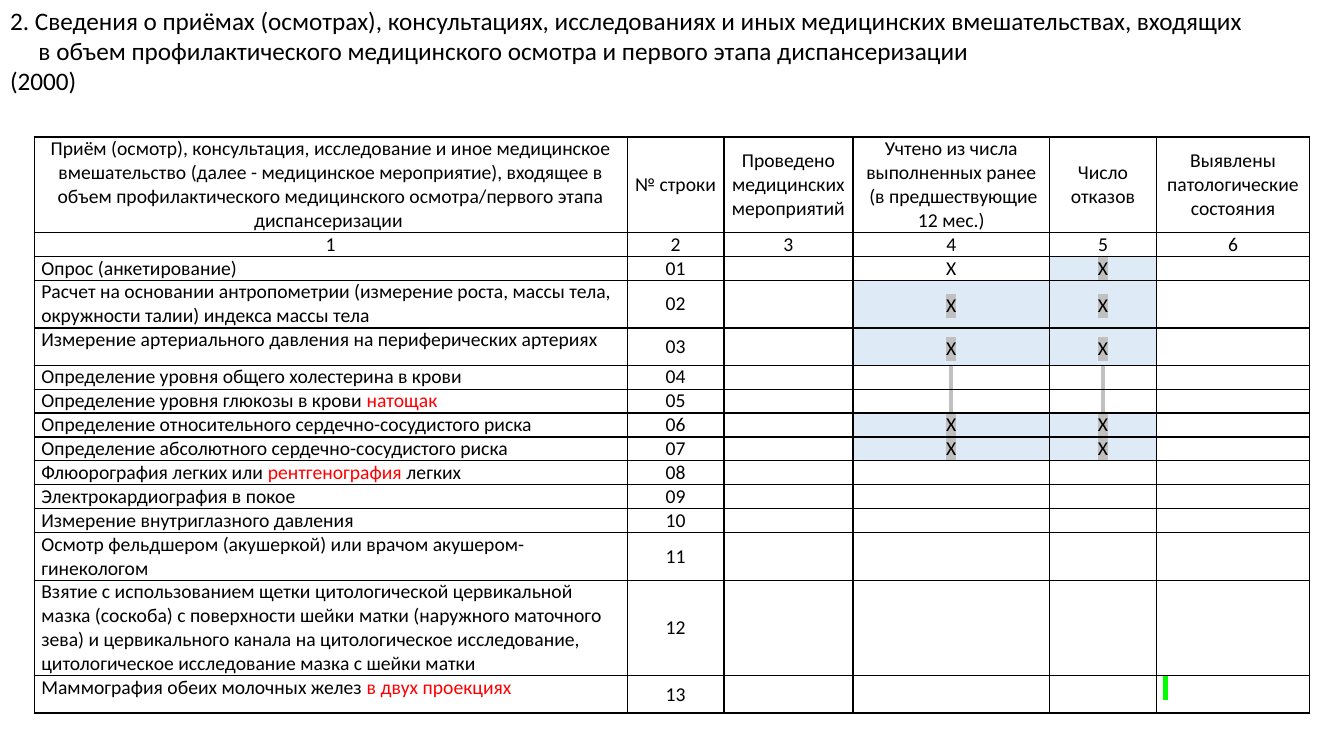
"""Build the slide with form table 2000 on preventive check-ups."""
from lxml import etree
from pptx import Presentation
from pptx.dml.color import RGBColor
from pptx.enum.text import MSO_ANCHOR, MSO_AUTO_SIZE, PP_ALIGN
from pptx.oxml.ns import qn
from pptx.util import Inches, Pt

LEFT, CENTER = PP_ALIGN.LEFT, PP_ALIGN.CENTER
TOP, MIDDLE = MSO_ANCHOR.TOP, MSO_ANCHOR.MIDDLE
NO_AUTOFIT = MSO_AUTO_SIZE.NONE
BLACK, RED, WHITE = "000000", "FF0000", "FFFFFF"
PALE_BLUE, GREY, GREEN = "DEEBF7", "C0C0C0", "00FF00"
LINE = 0.235


def rgb(value):
    return RGBColor.from_string(value)


def add_text(paragraph, text, size, color=BLACK, highlight=None):
    run = paragraph.add_run()
    run.text = text
    run.font.size = Pt(size)
    run.font.name = "Calibri"
    run.font.color.rgb = rgb(color)
    if highlight:
        marker = etree.Element(qn("a:highlight"))
        etree.SubElement(marker, qn("a:srgbClr"), val=highlight)
        run._r.rPr.find(qn("a:solidFill")).addnext(marker)


heading = [
    "2. Сведения о приёмах (осмотрах), консультациях, исследованиях и иных медицинских вмешательствах, входящих",
    "     в объем профилактического медицинского осмотра и первого этапа диспансеризации",
    "(2000)",
]
column_titles = [
    "Приём (осмотр), консультация, исследование и иное медицинское вмешательство "
    "(далее - медицинское мероприятие), входящее в объем профилактического "
    "медицинского осмотра/первого этапа диспансеризации ",
    "№ строки",
    "Проведено медицинских \nмероприятий",
    "Учтено из числа выполненных ранее\v (в предшествующие 12 мес.)",
    "Число отказов",
    "Выявлены патологические состояния",
]
column_widths = [5.88, 0.96, 1.28, 1.95, 1.06, 1.52]
procedures = [
    ("Опрос (анкетирование)", LINE),
    ("Расчет на основании антропометрии (измерение роста, массы тела, окружности талии) индекса массы тела", 2 * LINE),
    ("Измерение артериального давления на периферических артериях", 0.37),
    ("Определение уровня общего холестерина в крови", LINE),
    ("Определение уровня глюкозы в крови |натощак", LINE),
    ("Определение относительного сердечно-сосудистого риска", LINE),
    ("Определение абсолютного сердечно-сосудистого риска", LINE),
    ("Флюорография легких или |рентгенография| легких", LINE),
    ("Электрокардиография в покое", LINE),
    ("Измерение внутриглазного давления", LINE),
    ("Осмотр фельдшером (акушеркой) или врачом акушером-гинекологом", 2 * LINE),
    ("Взятие с использованием щетки цитологической цервикальной мазка (соскоба) с поверхности шейки матки "
     "(наружного маточного зева) и цервикального канала на цитологическое исследование, "
     "цитологическое исследование мазка с шейки матки", 4 * LINE),
    ("Маммография обеих молочных желез |в двух проекциях", 0.37),
]
row_heights = [4 * LINE, LINE] + [height for _, height in procedures]
crossed = {(2, 4)} | {(row, column) for row in (3, 4, 7, 8) for column in (3, 4)}
grey_gaps = {(row, column) for row in (5, 6) for column in (3, 4)}

grid = [column_titles, [str(number) for number in range(1, 7)]]
for number, (procedure, _) in enumerate(procedures, 1):
    grid.append([procedure, f"{number:02d}", "", "", "", ""])
grid[2][3] = "Х"
grid[14][5] = " "
for row, column in crossed:
    grid[row][column] = "Х"
for row, column in grey_gaps:
    grid[row][column] = " "
highlights = {place: GREY for place in crossed | grey_gaps} | {(14, 5): GREEN}

prs = Presentation()
prs.slide_width, prs.slide_height = Inches(13.33), Inches(7.5)
slide = prs.slides.add_slide(prs.slide_layouts[5])

title = slide.shapes.title
title_place = {"left": 0, "top": 0, "width": Inches(13.33), "height": Inches(1.01)}
for name, value in title_place.items():
    setattr(title, name, value)
title_format = {"word_wrap": True, "auto_size": NO_AUTOFIT, "vertical_anchor": TOP}
for name, value in title_format.items():
    setattr(title.text_frame, name, value)
title.text_frame.text = "\n".join([""] * len(heading))
for paragraph, line in zip(title.text_frame.paragraphs, heading):
    paragraph.alignment = LEFT
    add_text(paragraph, line, 18)

table = slide.shapes.add_table(
    len(grid), len(column_widths), Inches(0.34), Inches(1.36),
    Inches(sum(column_widths)), Inches(sum(row_heights))).table
table.first_row = table.horz_banding = False
for column, width in zip(table.columns, column_widths):
    column.width = Inches(width)
for row, height in zip(table.rows, row_heights):
    row.height = Inches(height)

for r, values in enumerate(grid):
    for c, value in enumerate(values):
        cell = table.cell(r, c)
        top_aligned = r == 1 or (r > 1 and c == 0) or value == " "
        cell_format = {
            "margin_left": Inches(0.07), "margin_right": Inches(0.07),
            "margin_top": 0, "margin_bottom": 0,
            "vertical_anchor": TOP if top_aligned else MIDDLE,
        }
        for name, setting in cell_format.items():
            setattr(cell, name, setting)
        cell.fill.solid()
        cell.fill.fore_color.rgb = rgb(PALE_BLUE if (r, c) in crossed else WHITE)
        for position, side in enumerate(("a:lnL", "a:lnR", "a:lnT", "a:lnB")):
            border = etree.Element(qn(side), w=str(Pt(1)))
            paint = etree.SubElement(border, qn("a:solidFill"))
            etree.SubElement(paint, qn("a:srgbClr"), val=BLACK)
            cell._tc.tcPr.insert(position, border)

        lines = value.split("\n")
        cell.text = "\n" * (len(lines) - 1)
        for paragraph, line in zip(cell.text_frame.paragraphs, lines):
            left_aligned = (r > 1 and c == 0) or (r, c) == (14, 5)
            paragraph.alignment = LEFT if left_aligned else CENTER
            if (r, c) == (0, 0):
                paragraph.space_before = Pt(6)
            if r in (3, 4) and c in (3, 4):
                paragraph.line_spacing = 1.15
            for part, piece in enumerate(line.split("|")):
                for index, text in enumerate(piece.split("\v")):
                    if index:
                        paragraph.add_line_break()
                    if text:
                        add_text(paragraph, text, 14, RED if part % 2 else BLACK, highlights.get((r, c)))
            paragraph._p.get_or_add_endParaRPr().set("sz", "1400")

prs.save("out.pptx")
